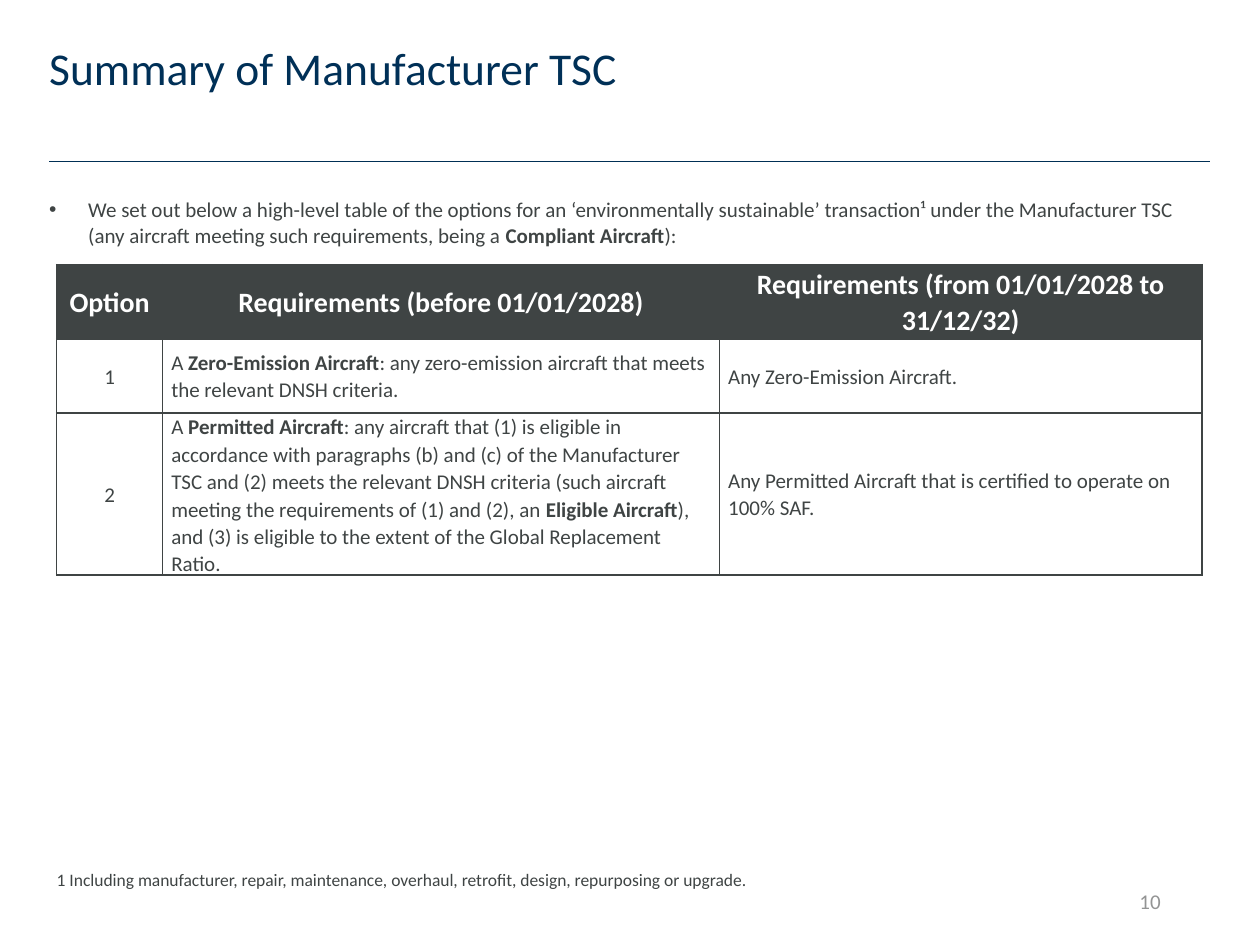
from dataclasses import dataclass

from lxml import etree
from pptx import Presentation
from pptx import util as u
from pptx.dml.color import RGBColor
from pptx.enum import shapes, text
from pptx.oxml import ns

COLORS = {"navy": "003057", "rule": "002F55", "ink": "3F4444",
          "white": "FFFFFF", "grey": "939494"}
FONT = "Calibri"

# The slide is a grid of 100 columns by 75 rows
COLUMNS, ROWS = 100, 75
UNIT = u.Inches(0.1)
MARGIN, TABLE_LEFT, CONTENT_WIDTH = 3.9, 4.5, 92.1
CENTER, RIGHT = text.PP_ALIGN.CENTER, text.PP_ALIGN.RIGHT


@dataclass
class Style:
    size: float
    color: str
    bold: bool = False
    align: text.PP_ALIGN = text.PP_ALIGN.LEFT
    spacing: float | u.Pt = 1.0
    after: float = 0


@dataclass
class Block:
    words: str
    left: float
    top: float
    width: float
    height: float
    style: Style
    margins: tuple[float, float] = (0, 0)
    anchor: text.MSO_ANCHOR = text.MSO_ANCHOR.TOP
    bullet: bool = False


def grid(cells: float) -> int:
    return round(cells * UNIT)


def rgb(name: str) -> RGBColor:
    return RGBColor.from_string(COLORS[name])


def apply(target, values: dict) -> None:
    for name, value in values.items():
        setattr(target, name, value)


def write(paragraph, words: str, style: Style) -> None:
    """Fill a paragraph; words between ** marks are bold."""
    apply(paragraph, {"alignment": style.align, "line_spacing": style.spacing,
                      "space_after": u.Pt(style.after)})
    for index, part in enumerate(words.split("**")):
        run = paragraph.add_run()
        run.text = part
        apply(run.font, {"name": FONT, "size": u.Pt(style.size),
                         "bold": style.bold or index % 2 == 1})
        run.font.color.rgb = rgb(style.color)


def add_bullet(paragraph) -> None:
    properties = paragraph._p.get_or_add_pPr()
    indent = u.Inches(0.31)
    properties.set("marL", str(indent))
    properties.set("indent", str(-indent))
    etree.SubElement(properties, ns.qn("a:buFont"), typeface="Arial")
    etree.SubElement(properties, ns.qn("a:buChar"), char="•")


def draw_block(slide, block: Block) -> None:
    box = slide.shapes.add_textbox(*map(grid, (block.left, block.top, block.width, block.height)))
    side, end = map(grid, block.margins)
    apply(box.text_frame, {"word_wrap": True, "vertical_anchor": block.anchor,
                           "margin_left": side, "margin_right": side,
                           "margin_top": end, "margin_bottom": end})
    paragraph = box.text_frame.paragraphs[0]
    write(paragraph, block.words, block.style)
    if block.bullet:
        add_bullet(paragraph)


def draw_rule(slide, top: float) -> None:
    rule = slide.shapes.add_connector(
        shapes.MSO_CONNECTOR.STRAIGHT, grid(MARGIN), grid(top),
        grid(MARGIN + CONTENT_WIDTH), grid(top))
    rule.line.color.rgb = rgb("rule")
    rule.line.width = u.Pt(0.75)
    etree.SubElement(rule._element.spPr, ns.qn("a:effectLst"))


def add_borders(cell) -> None:
    properties = cell._tc.get_or_add_tcPr()
    for index, side in enumerate(("lnL", "lnR", "lnT", "lnB")):
        line = etree.Element(ns.qn(f"a:{side}"), w=str(u.Pt(1)))
        fill = etree.SubElement(line, ns.qn("a:solidFill"))
        etree.SubElement(fill, ns.qn("a:srgbClr"), val=COLORS["ink"])
        properties.insert(index, line)


def draw_options(slide, rows: list[tuple[str, ...]]) -> None:
    widths, row_height, full_height = (8.4, 44.2, 38.3), 5.9, 24.6
    frame = slide.shapes.add_table(
        len(rows), len(widths), grid(TABLE_LEFT), grid(21), grid(sum(widths)), grid(full_height))
    table = frame.table
    for column, width in zip(table.columns, widths):
        column.width = grid(width)
    for row in table.rows:
        row.height = grid(row_height)
    frame.height = grid(full_height)  # the last row grows with its text

    for r, entries in enumerate(rows):
        for c, words in enumerate(entries):
            cell = table.cell(r, c)
            header = r == 0
            apply(cell, {"margin_left": grid(0.7), "margin_right": grid(0.7),
                         "margin_top": 0, "margin_bottom": 0,
                         "vertical_anchor": text.MSO_ANCHOR.MIDDLE})
            cell.fill.solid()
            cell.fill.fore_color.rgb = rgb("ink" if header else "white")
            add_borders(cell)
            style = Style(16 if header else 12, "white" if header else "ink", header,
                          CENTER if header or c == 0 else text.PP_ALIGN.LEFT, 1.07, 8)
            write(cell.text_frame.paragraphs[0], words, style)


TITLE = Block("Summary of Manufacturer TSC", MARGIN, 3.9, CONTENT_WIDTH, 3.9,
              Style(26, "navy", spacing=u.Pt(26)))
INTRO = Block("We set out below a high-level table of the options for an ‘environmentally "
              "sustainable’ transaction¹ under the Manufacturer TSC (any aircraft meeting such "
              "requirements, being a **Compliant Aircraft**):",
              MARGIN, 15.5, CONTENT_WIDTH, 48.6, Style(12, "ink", spacing=1.04, after=12),
              bullet=True)
FOOTNOTE = Block("1 Including manufacturer, repair, maintenance, overhaul, retrofit, design, "
                 "repurposing or upgrade.",
                 TABLE_LEFT, 68.9, CONTENT_WIDTH, 6.1, Style(10, "ink", spacing=1.04, after=12))
PAGE_NUMBER = Block("10", 70.6, 69.5, 22.5, 4, Style(12, "grey", align=RIGHT),
                    margins=(1, 0.5), anchor=text.MSO_ANCHOR.MIDDLE)

OPTIONS = [
    ("Option", "Requirements (before 01/01/2028)", "Requirements (from 01/01/2028 to 31/12/32)"),
    ("1", "A **Zero-Emission Aircraft**: any zero-emission aircraft that meets the relevant "
          "DNSH criteria.",
     "Any Zero-Emission Aircraft."),
    ("2", "A **Permitted Aircraft**: any aircraft that (1) is eligible in accordance with "
          "paragraphs (b) and (c) of the Manufacturer TSC and (2) meets the relevant DNSH "
          "criteria (such aircraft meeting the requirements of (1) and (2), an **Eligible "
          "Aircraft**), and (3) is eligible to the extent of the Global Replacement Ratio.",
     "Any Permitted Aircraft that is certified to operate on 100% SAF."),
]


def main() -> None:
    deck = Presentation()
    apply(deck, {"slide_width": grid(COLUMNS), "slide_height": grid(ROWS)})
    slide = deck.slides.add_slide(deck.slide_layouts[6])

    # Heading and introduction
    draw_rule(slide, 12.8)
    draw_block(slide, TITLE)
    draw_block(slide, INTRO)

    # Table of options
    draw_options(slide, OPTIONS)

    # Footer
    draw_block(slide, FOOTNOTE)
    draw_block(slide, PAGE_NUMBER)

    deck.save("out.pptx")


if __name__ == "__main__":
    main()
